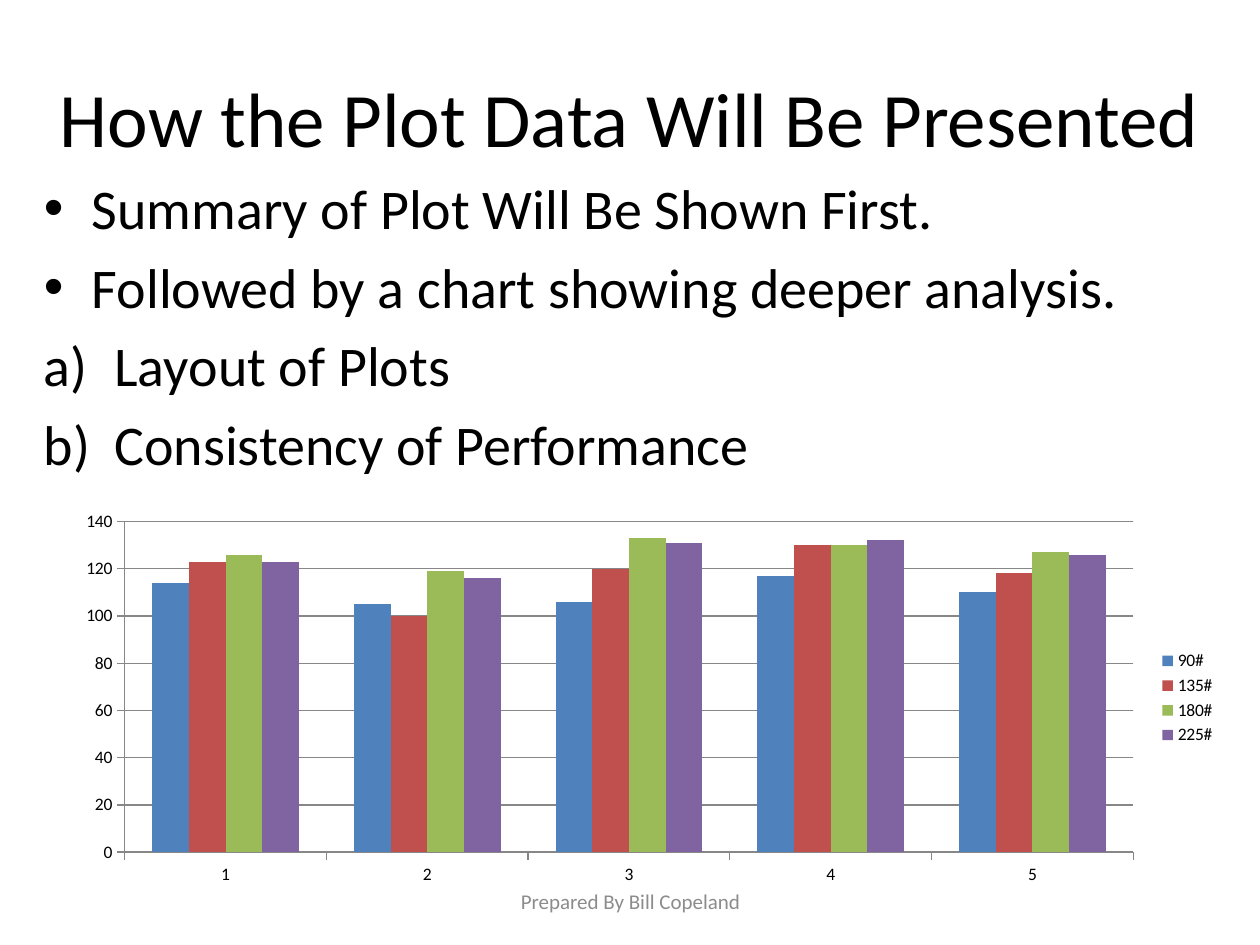
from dataclasses import dataclass

from lxml.etree import SubElement
from pptx import Presentation
from pptx.chart.data import CategoryChartData
from pptx.dml.color import RGBColor
from pptx.enum.chart import XL_CHART_TYPE, XL_LEGEND_POSITION, XL_TICK_MARK
from pptx.enum.text import MSO_ANCHOR, PP_ALIGN
from pptx.oxml.ns import qn
from pptx.slide import Slide
from pptx.util import Inches, Pt

FONT = "Calibri"
BLACK = RGBColor(0x00, 0x00, 0x00)
FOOTER_GRAY = RGBColor(0x8C, 0x8C, 0x8C)
AXIS_GRAY = RGBColor(0x87, 0x87, 0x87)
BLUE = RGBColor(0x4F, 0x81, 0xBD)
RED = RGBColor(0xC0, 0x50, 0x4D)
GREEN = RGBColor(0x9B, 0xBB, 0x59)
PURPLE = RGBColor(0x80, 0x64, 0xA2)


@dataclass(frozen=True)
class ListItem:
    text: str
    indent: float
    lettered: bool = False


@dataclass(frozen=True)
class PlotSeries:
    name: str
    values: tuple[float, ...]
    color: RGBColor


LIST_ITEMS = (
    ListItem("Summary of Plot Will Be Shown First.", 0.38),
    ListItem("Followed by a chart showing deeper analysis.", 0.38),
    ListItem("Layout of Plots", 0.56, lettered=True),
    ListItem("Consistency of Performance", 0.56, lettered=True),
)
PLOTS = ("1", "2", "3", "4", "5")
PLOT_SERIES = (
    PlotSeries("90#", (114, 105, 106, 117, 110), BLUE),
    PlotSeries("135#", (123, 100, 120, 130, 118), RED),
    PlotSeries("180#", (126, 119, 133, 130, 127), GREEN),
    PlotSeries("225#", (123, 116, 131, 132, 126), PURPLE),
)


def add_run(paragraph, text: str, size: float, color: RGBColor = BLACK) -> None:
    run = paragraph.add_run()
    run.text = text
    run.font.name = FONT
    run.font.size = Pt(size)
    run.font.color.rgb = color


def add_title(slide: Slide) -> None:
    title = slide.shapes.title
    title.left, title.top = Inches(0.25), Inches(0.3)
    title.width, title.height = Inches(9.5), Inches(1.25)
    title.text_frame.vertical_anchor = MSO_ANCHOR.MIDDLE
    paragraph = title.text_frame.paragraphs[0]
    paragraph.alignment = PP_ALIGN.CENTER
    add_run(paragraph, "How the Plot Data Will Be Presented", 44)


def set_list_marker(paragraph, item: ListItem) -> None:
    properties = paragraph._p.get_or_add_pPr()
    properties.set("marL", str(Inches(item.indent)))
    properties.set("indent", str(-Inches(item.indent)))
    if item.lettered:
        SubElement(properties, qn("a:buFont"), typeface="+mj-lt")
        SubElement(properties, qn("a:buAutoNum"), type="alphaLcParenR")
    else:
        SubElement(properties, qn("a:buFont"), typeface="Arial")
        SubElement(properties, qn("a:buChar"), char="•")


def add_list(slide: Slide, items: tuple[ListItem, ...]) -> None:
    box = slide.shapes.add_textbox(Inches(0.25), Inches(1.33), Inches(9.58), Inches(5.37))
    frame = box.text_frame
    frame.word_wrap = True
    for index, item in enumerate(items):
        paragraph = frame.add_paragraph() if index else frame.paragraphs[0]
        paragraph.space_before = Pt(6.4)
        set_list_marker(paragraph, item)
        add_run(paragraph, item.text, 32)


def add_footer(slide: Slide) -> None:
    box = slide.shapes.add_textbox(Inches(3.42), Inches(6.95), Inches(3.17), Inches(0.4))
    frame = box.text_frame
    frame.word_wrap = True
    frame.vertical_anchor = MSO_ANCHOR.MIDDLE
    paragraph = frame.paragraphs[0]
    paragraph.alignment = PP_ALIGN.CENTER
    add_run(paragraph, "Prepared By Bill Copeland", 12, FOOTER_GRAY)


def format_line(line) -> None:
    line.color.rgb = AXIS_GRAY
    line.width = Pt(0.75)


def add_plot_chart(slide: Slide, series_list: tuple[PlotSeries, ...]) -> None:
    data = CategoryChartData()
    data.categories = PLOTS
    for series in series_list:
        data.add_series(series.name, series.values)
    chart = slide.shapes.add_chart(
        XL_CHART_TYPE.COLUMN_CLUSTERED,
        Inches(0.5), Inches(4), Inches(9.25), Inches(3.08), data,
    ).chart
    chart.has_title = False
    chart.font.name = FONT
    chart.font.size = Pt(10)
    chart.font.color.rgb = BLACK
    chart.has_legend = True
    chart.legend.position = XL_LEGEND_POSITION.RIGHT
    chart.legend.include_in_layout = False

    plot = chart.plots[0]
    plot.gap_width = 150
    plot.overlap = 0
    plot.vary_by_categories = False
    for series, drawn in zip(series_list, plot.series):
        drawn.format.fill.solid()
        drawn.format.fill.fore_color.rgb = series.color

    for axis in (chart.category_axis, chart.value_axis):
        axis.major_tick_mark = XL_TICK_MARK.OUTSIDE
        axis.minor_tick_mark = XL_TICK_MARK.NONE
        format_line(axis.format.line)
    value_axis = chart.value_axis
    value_axis.minimum_scale = 0
    value_axis.maximum_scale = 140
    value_axis.major_unit = 20
    value_axis.has_major_gridlines = True
    format_line(value_axis.major_gridlines.format.line)


def main() -> None:
    presentation = Presentation()
    presentation.slide_width = Inches(10)
    presentation.slide_height = Inches(7.5)
    slide = presentation.slides.add_slide(presentation.slide_layouts.get_by_name("Title Only"))
    add_title(slide)
    add_list(slide, LIST_ITEMS)
    add_footer(slide)
    add_plot_chart(slide, PLOT_SERIES)
    presentation.save("out.pptx")


if __name__ == "__main__":
    main()
